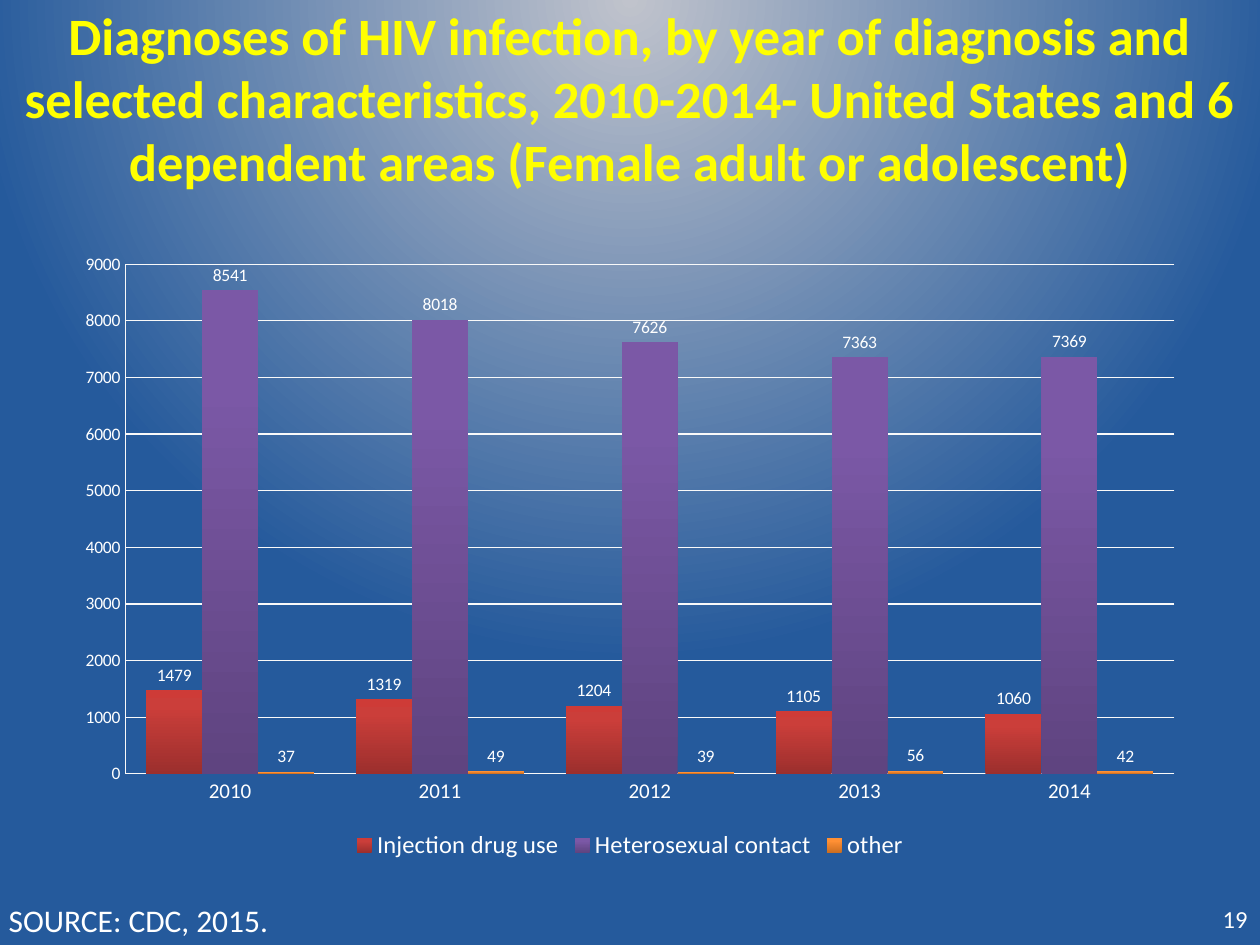
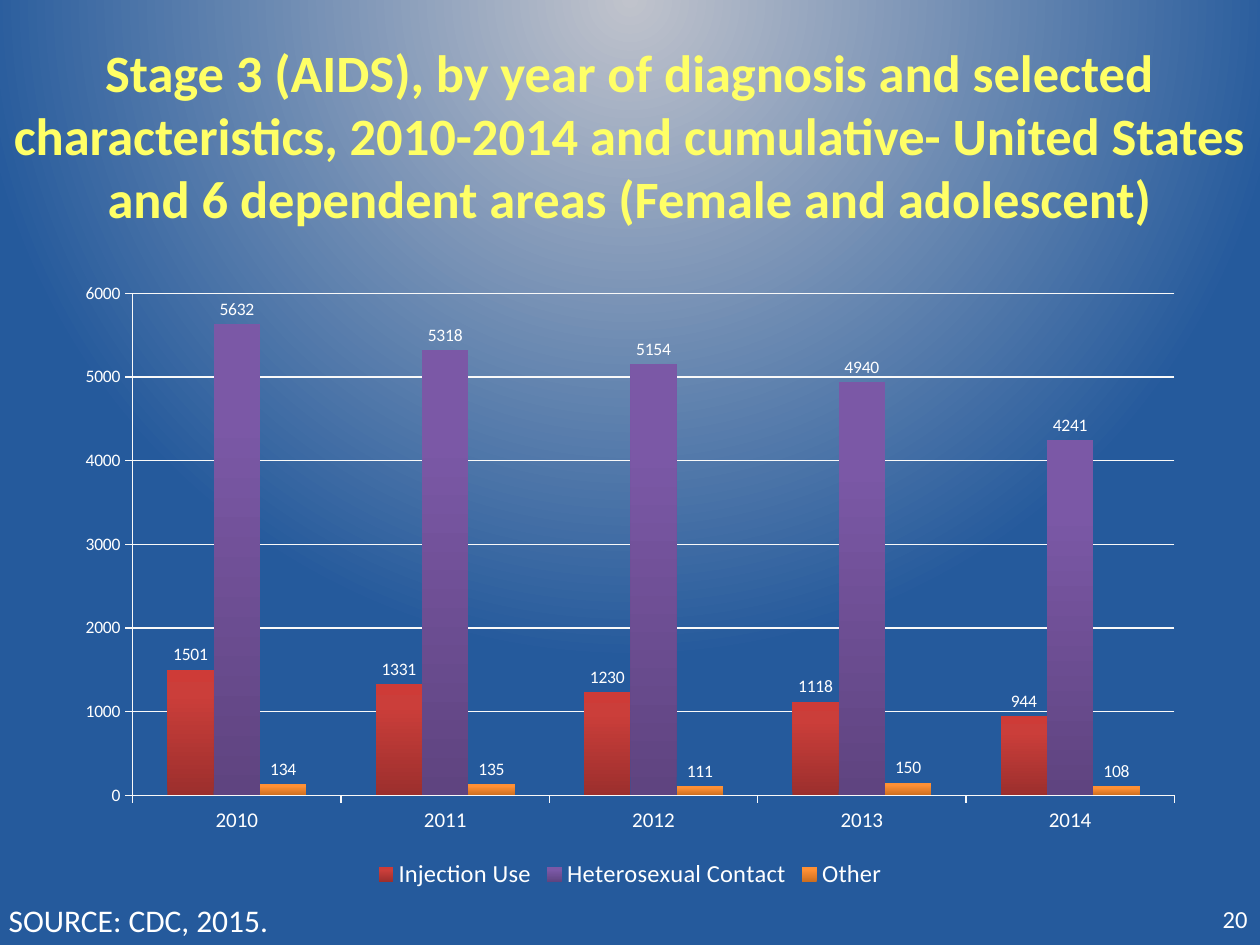
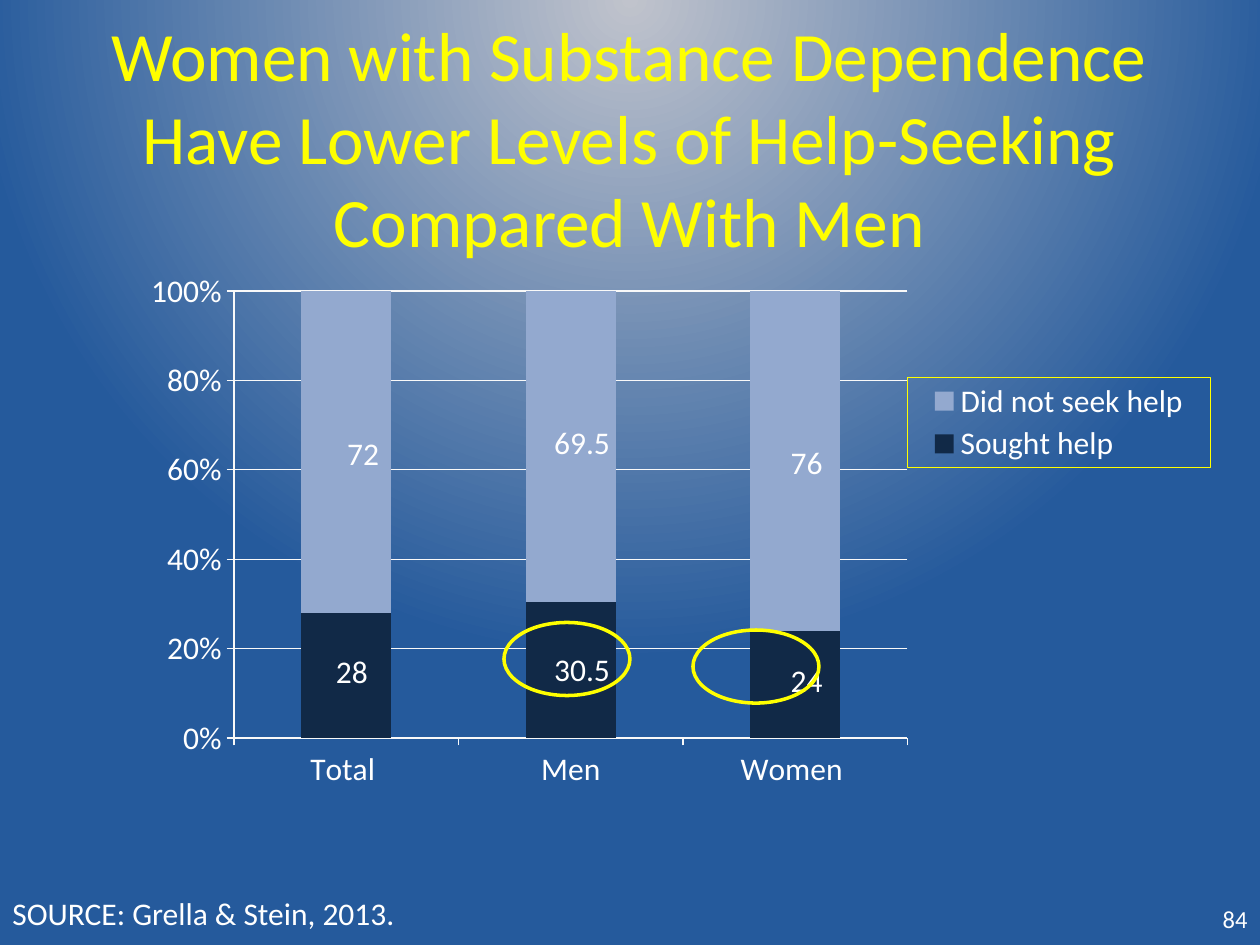
import pptx
import pptx.chart.data
import pptx.dml.color
import pptx.enum.chart
import pptx.enum.shapes
import pptx.enum.text
import pptx.oxml
import pptx.oxml.ns
import pptx.util
from pptx.dml.color import RGBColor
from pptx.util import Inches

# Shared style
FONT = "Calibri"
WHITE = RGBColor(0xFF, 0xFF, 0xFF)
YELLOW = RGBColor(0xFF, 0xFF, 0x00)
PALE_YELLOW = RGBColor(0xFF, 0xFF, 0x66)
AXIS_LINE = RGBColor(0xF9, 0xF9, 0xF9)
NAVY = RGBColor(0x11, 0x29, 0x47)
LIGHT_BLUE = RGBColor(0x93, 0xA9, 0xCF)

# Gradients: (position in percent, colour)
BACKGROUND_STOPS = [
    (0, RGBColor(0x19, 0x3D, 0x69)),
    (0, RGBColor(0xC0, 0xC3, 0xCC)),
    (84, RGBColor(0x25, 0x5A, 0x9C)),
]
BACKGROUND_DIRECTION = ('<a:path {ns} path="circle"><a:fillToRect l="50000" t="-80000" '
                        'r="50000" b="180000"/></a:path>')
RED_STOPS = [
    (0, RGBColor(0x9C, 0x2F, 0x2D)),
    (80, RGBColor(0xCB, 0x3E, 0x3A)),
    (100, RGBColor(0xCE, 0x3B, 0x37)),
]
PURPLE_STOPS = [
    (0, RGBColor(0x5F, 0x44, 0x80)),
    (80, RGBColor(0x7B, 0x58, 0xA6)),
    (100, RGBColor(0x7C, 0x57, 0xA8)),
]
ORANGE_STOPS = [
    (0, RGBColor(0xCC, 0x6E, 0x20)),
    (80, RGBColor(0xFF, 0x90, 0x34)),
    (100, RGBColor(0xFF, 0x91, 0x36)),
]
BAR_DIRECTION = '<a:lin {ns} ang="16200000" scaled="0"/>'

# Chart data
YEARS = ["2010", "2011", "2012", "2013", "2014"]
HIV_DIAGNOSES = [
    ("Injection drug use", [1479, 1319, 1204, 1105, 1060]),
    ("Heterosexual contact", [8541, 8018, 7626, 7363, 7369]),
    ("other", [37, 49, 39, 56, 42]),
]
AIDS_DIAGNOSES = [
    ("Injection Use", [1501, 1331, 1230, 1118, 944]),
    ("Heterosexual Contact", [5632, 5318, 5154, 4940, 4241]),
    ("Other", [134, 135, 111, 150, 108]),
]
HELP_GROUPS = ["Total ", "Men", "Women "]
HELP_SEEKING = [
    ("Sought help", [28, 30.5, 24]),
    ("Did not seek help", [72, 69.5, 76]),
]
# Shift of each help-seeking label, as parts of the chart's width and height
HELP_LABEL_SHIFTS = [(0.005, -0.005), (0.01, 0), (0.01, -0.005),
                     (0.015, 0.005), (0.01, -0.005), (0.01, 0.005)]


# XML helpers
def from_xml(markup, *prefixes):
    return pptx.oxml.parse_xml(markup.replace("{ns}", pptx.oxml.ns.nsdecls(*prefixes)))


def find_all(element, tag):
    return list(element.iter(pptx.oxml.ns.qn(tag)))


def set_gradient(gradient, stops, direction):
    for child in list(gradient):
        gradient.remove(child)
    stop_list = "".join(
        f'<a:gs pos="{position * 1000}"><a:srgbClr val="{color}"/></a:gs>'
        for position, color in stops)
    gradient.append(from_xml("<a:gsLst {ns}>" + stop_list + "</a:gsLst>", "a"))
    gradient.append(from_xml(direction, "a"))


def set_layout(parent, index, **settings):
    for old in parent.findall(pptx.oxml.ns.qn("c:layout")):
        parent.remove(old)
    values = "".join(f'<c:{name} val="{value}"/>' for name, value in settings.items())
    parent.insert(index, from_xml(
        "<c:layout {ns}><c:manualLayout>" + values + "</c:manualLayout></c:layout>", "c"))


# Slide elements
def style_font(font, size, color=WHITE, bold=False):
    font.name = FONT
    font.size = pptx.util.Pt(size)
    font.bold = bold
    font.color.rgb = color


def add_slide(presentation):
    slide = presentation.slides.add_slide(presentation.slide_layouts[6])
    slide.background.fill.gradient()
    gradient = find_all(slide.element, "a:gradFill")[0]
    set_gradient(gradient, BACKGROUND_STOPS, BACKGROUND_DIRECTION)
    return slide


def add_text(slide, text, box, size, color=WHITE, bold=False, align="LEFT", anchor="MIDDLE"):
    shape = slide.shapes.add_textbox(*map(Inches, box))
    frame = shape.text_frame
    frame.word_wrap = True
    frame.vertical_anchor = pptx.enum.text.MSO_ANCHOR[anchor]
    paragraph = frame.paragraphs[0]
    paragraph.text = text
    paragraph.alignment = pptx.enum.text.PP_ALIGN[align]
    style_font(paragraph.font, size, color, bold)
    return frame


def add_page_number(slide, number):
    add_text(slide, str(number), (7.67, 7.09, 2.33, 0.4), 14, align="RIGHT")


def style_axis(axis, size, tick_mark):
    style_font(axis.tick_labels.font, size)
    axis.major_tick_mark = tick_mark
    axis.minor_tick_mark = pptx.enum.chart.XL_TICK_MARK.NONE
    lines = [axis.format.line]
    if axis.has_major_gridlines:
        lines.append(axis.major_gridlines.format.line)
    for line in lines:
        line.color.rgb = AXIS_LINE
        line.width = pptx.util.Pt(0.75)


def add_column_chart(slide, kind, box, categories, series_data, gap,
                     sizes, legend_position, ticks=True):
    """Sizes are those of the labels, the categories and the legend."""
    label_size, category_size, legend_size = sizes
    data = pptx.chart.data.CategoryChartData()
    data.categories = categories
    for name, values in series_data:
        data.add_series(name, values)
    chart = slide.shapes.add_chart(
        pptx.enum.chart.XL_CHART_TYPE[kind], *map(Inches, box), data).chart
    chart.has_title = False
    style_font(chart.font, label_size)

    tick_mark = pptx.enum.chart.XL_TICK_MARK["OUTSIDE" if ticks else "NONE"]
    chart.value_axis.has_major_gridlines = True
    style_axis(chart.value_axis, label_size, tick_mark)
    style_axis(chart.category_axis, category_size, tick_mark)

    chart.has_legend = True
    chart.legend.position = pptx.enum.chart.XL_LEGEND_POSITION[legend_position]
    chart.legend.include_in_layout = False
    style_font(chart.legend.font, legend_size)

    plot = chart.plots[0]
    plot.vary_by_categories = False
    plot.gap_width = gap
    for series in plot.series:
        series.invert_if_negative = False
        series.data_labels.show_value = True
        style_font(series.data_labels.font, label_size)
    return chart


def add_diagnosis_slide(presentation, title, title_box, title_color,
                        chart_top, series_data, gap, ticks, number):
    slide = add_slide(presentation)
    frame = add_text(slide, title, title_box, 30, title_color, True, "CENTER")
    frame.margin_bottom = Inches(0.55)

    chart = add_column_chart(slide, "COLUMN_CLUSTERED", (0.5, chart_top, 9, 4.95),
                             YEARS, series_data, gap, (10, 12, 14), "BOTTOM", ticks)
    for series in chart.plots[0].series:
        series.format.fill.gradient()
        series.data_labels.position = pptx.enum.chart.XL_LABEL_POSITION.OUTSIDE_END
    gradients = find_all(chart.element, "a:gradFill")
    for gradient, stops in zip(gradients, (RED_STOPS, PURPLE_STOPS, ORANGE_STOPS)):
        set_gradient(gradient, stops, BAR_DIRECTION)

    add_text(slide, "SOURCE: CDC, 2015.", (-0.03, 7.1, 2.78, 0.4), 18, anchor="TOP")
    add_page_number(slide, number)


def add_help_chart(slide):
    chart = add_column_chart(slide, "COLUMN_STACKED_100", (0.75, 2.08, 9, 4.58),
                             HELP_GROUPS, HELP_SEEKING, 150, (18, 18, 18), "RIGHT")
    chart.plots[0].overlap = 100
    chart.value_axis.major_unit = 0.2
    chart.value_axis.tick_labels.number_format = "0%"
    chart.value_axis.tick_labels.number_format_is_linked = False

    # Bars and their shifted labels
    for series, color in zip(chart.plots[0].series, (NAVY, LIGHT_BLUE)):
        series.format.fill.solid()
        series.format.fill.fore_color.rgb = color
        for index in range(len(HELP_GROUPS)):
            style_font(series.points[index].data_label.font, 18)
    for label, (x, y) in zip(find_all(chart.element, "c:dLbl"), HELP_LABEL_SHIFTS):
        set_layout(label, 1, x=x, y=y)

    # Plot area and outlined legend
    plot_area = find_all(chart.element, "c:plotArea")[0]
    set_layout(plot_area, 0, layoutTarget="inner", xMode="edge", yMode="edge",
               x=0.123, y=0.05, w=0.594, h=0.775)
    legend = find_all(chart.element, "c:legend")[0]
    set_layout(legend, 1, xMode="edge", yMode="edge", x=0.717, y=0.2, w=0.267, h=0.156)
    outline = from_xml('<c:spPr {ns}><a:ln w="9525"><a:solidFill>'
                       f'<a:srgbClr val="{YELLOW}"/>'
                       '</a:solidFill></a:ln></c:spPr>', "c", "a")
    legend.find(pptx.oxml.ns.qn("c:txPr")).addprevious(outline)


def add_highlights(slide, positions):
    group = slide.shapes.add_group_shape()
    for left, top in positions:
        ellipse = group.shapes.add_shape(
            pptx.enum.shapes.MSO_SHAPE.OVAL, Inches(left), Inches(top),
            Inches(1), Inches(0.58))
        ellipse.shadow.inherit = False
        ellipse.fill.background()
        ellipse.line.color.rgb = YELLOW
        ellipse.line.width = pptx.util.Pt(2)


def add_help_slide(presentation):
    slide = add_slide(presentation)
    add_text(slide, "Women with Substance Dependence Have Lower Levels of "
             "Help-Seeking Compared With Men", (0.33, 0.25, 9.33, 1.67),
             39.6, YELLOW, align="CENTER")
    add_help_chart(slide)
    add_highlights(slide, [(4, 4.94), (5.5, 5)])
    add_page_number(slide, 84)
    add_text(slide, "SOURCE: Grella & Stein, 2013.", (0, 7, 9.83, 0.49), 18)


def main():
    presentation = pptx.Presentation()
    presentation.slide_width = Inches(10)
    presentation.slide_height = Inches(7.5)

    add_diagnosis_slide(
        presentation,
        "Diagnoses of HIV infection, by year of diagnosis and selected characteristics, "
        "2010-2014- United States and 6 dependent areas (Female adult or adolescent)",
        (0, 0.3, 10, 1.45), YELLOW, 1.92, HIV_DIAGNOSES, gap=75, ticks=False, number=19)
    add_diagnosis_slide(
        presentation,
        "Stage 3 (AIDS), by year of diagnosis and selected characteristics, 2010-2014 and "
        "cumulative- United States and 6 dependent areas (Female and adolescent)",
        (0, 0.63, 10, 1.37), PALE_YELLOW, 2.15, AIDS_DIAGNOSES, gap=150, ticks=True, number=20)
    add_help_slide(presentation)

    presentation.save("out.pptx")


if __name__ == "__main__":
    main()
